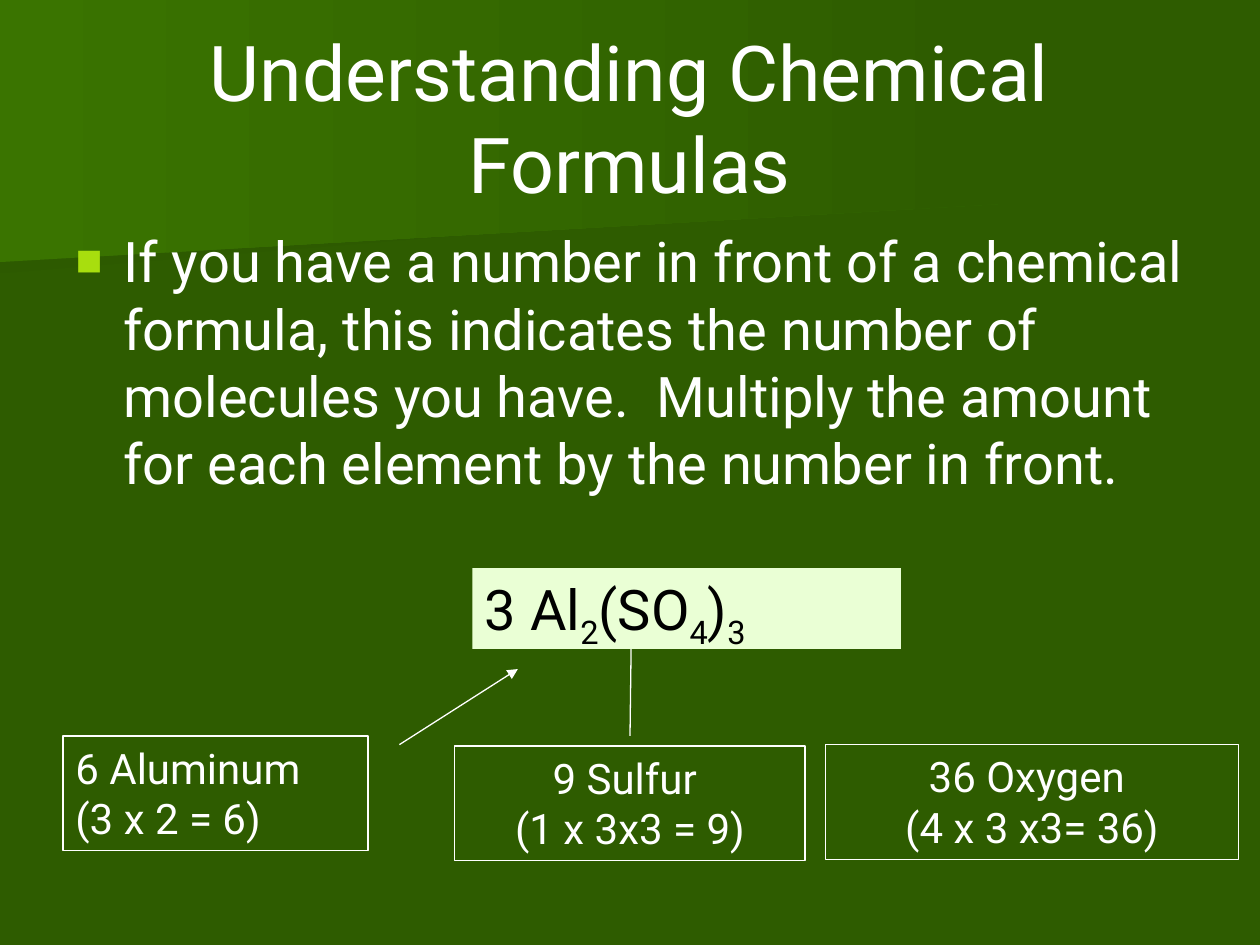
from dataclasses import dataclass

from lxml.etree import SubElement
from pptx import Presentation
from pptx.dml.color import RGBColor
from pptx.enum.shapes import MSO_CONNECTOR, MSO_SHAPE
from pptx.enum.text import MSO_ANCHOR, MSO_AUTO_SIZE, PP_ALIGN
from pptx.oxml.ns import qn
from pptx.util import Inches, Pt


@dataclass(frozen=True)
class Theme:
    font: str = "Roboto"
    title_size: int = 44
    body_size: int = 32
    label_size: int = 24
    line_width: float = 0.75
    background: RGBColor = RGBColor.from_string("2E5C00")
    shade: RGBColor = RGBColor.from_string("2D5A00")
    glow: RGBColor = RGBColor.from_string("3A7400")
    text: RGBColor = RGBColor.from_string("FFFFFF")
    formula_text: RGBColor = RGBColor.from_string("000000")
    formula_fill: RGBColor = RGBColor.from_string("EAFFD5")
    bullet: str = "A8DE0E"


theme = Theme()


def write(para, text, size, color=theme.text, align=PP_ALIGN.LEFT):
    """Add one formatted run to para and return it."""
    para.alignment = align
    span = para.add_run()
    span.text = text
    for name, value in {"name": theme.font, "size": Pt(size)}.items():
        setattr(span.font, name, value)
    span.font.color.rgb = color
    return span


def place_box(page, left, top, width, height):
    """Add a plain rectangle with top-anchored text."""
    box = page.shapes.add_shape(
        MSO_SHAPE.RECTANGLE, *map(Inches, (left, top, width, height)))
    box.shadow.inherit = False
    box.fill.background()
    box.line.fill.background()
    frame_format = {
        "word_wrap": True,
        "vertical_anchor": MSO_ANCHOR.TOP,
        "auto_size": MSO_AUTO_SIZE.SHAPE_TO_FIT_TEXT,
    }
    for name, value in frame_format.items():
        setattr(box.text_frame, name, value)
    return box


deck = Presentation()
deck.slide_width, deck.slide_height = Inches(10), Inches(7.5)
page = deck.slides.add_slide(deck.slide_layouts[1])
page.background.fill.solid()
page.background.fill.fore_color.rgb = theme.background
title, body = page.placeholders

# Background bands, fading to the right behind the text
bands = [
    (theme.shade, [(7.78, 1.53), (0, 2.17), (0, 1.01), (7.79, 1.01), (7.78, 1.28)]),
    (theme.glow, [(7.92, 1.62), (0, 2.08), (0, 0), (7.92, 0)]),
]
for start_color, corners in bands:
    points = [(Inches(x), Inches(y)) for x, y in corners]
    outline = page.shapes.build_freeform(*points[0])
    outline.add_line_segments(points[1:], close=True)
    band = outline.convert_to_shape()
    band.shadow.inherit = False
    band.line.fill.background()
    band.fill.gradient()
    band.fill.gradient_angle = 0
    for stop, color in zip(band.fill.gradient_stops, (start_color, theme.background)):
        stop.color.rgb = color
    title.element.addprevious(band.element)

# Title and explanation
for holder, top, height, anchor in (
    (title, 0.3, 1.25, MSO_ANCHOR.MIDDLE),
    (body, 1.75, 4.92, MSO_ANCHOR.TOP),
):
    holder.left, holder.top = Inches(0.5), Inches(top)
    holder.width, holder.height = Inches(9), Inches(height)
    holder.text_frame.auto_size = MSO_AUTO_SIZE.NONE
    holder.text_frame.vertical_anchor = anchor

write(title.text_frame.paragraphs[0], "Understanding Chemical Formulas",
      theme.title_size, align=PP_ALIGN.CENTER)

para = body.text_frame.paragraphs[0]
write(para, "If you have a number in front of a chemical formula, this indicates "
      "the number of molecules you have.  Multiply the amount for each element "
      "by the number in front.", theme.body_size)
para.space_before = Pt(0.2 * theme.body_size)
bullet_format = para._p.get_or_add_pPr()
bullet_format.set("marL", str(Inches(0.38)))
bullet_format.set("indent", str(Inches(-0.38)))
bullet_color = SubElement(bullet_format, qn("a:buClr"))
SubElement(bullet_color, qn("a:srgbClr"), val=theme.bullet)
SubElement(bullet_format, qn("a:buSzPct"), val="80000")
SubElement(bullet_format, qn("a:buChar"), char="■")

# Arrows from the counts to the formula
for start, end in (((3.17, 5.91), (4.11, 5.31)), ((5, 5.84), (5.01, 5.05))):
    arrow = page.shapes.add_connector(
        MSO_CONNECTOR.STRAIGHT, *map(Inches, start + end))
    arrow.line.color.rgb = theme.text
    arrow.line.width = Pt(theme.line_width)
    SubElement(arrow.line._get_or_add_ln(), qn("a:tailEnd"), type="triangle")
    SubElement(arrow.element.spPr, qn("a:effectLst"))

# Formula, covering the tip of the middle arrow
formula = place_box(page, 3.75, 4.51, 3.4, 0.64)
formula.fill.solid()
formula.fill.fore_color.rgb = theme.formula_fill
para = formula.text_frame.paragraphs[0]
for base, subscript in (("3 Al", "2"), ("(SO", "4"), (")", "3")):
    write(para, base, theme.body_size, theme.formula_text)
    span = write(para, subscript, theme.body_size, theme.formula_text)
    span.font._element.set("baseline", "-25000")

# Atom counts
counts = [
    (0.5, 5.84, 2.42, PP_ALIGN.LEFT, ("6 Aluminum", "(3 x 2 = 6)")),
    (3.61, 5.92, 2.78, PP_ALIGN.CENTER, ("9 Sulfur ", "(1 x 3x3 = 9)")),
    (6.55, 5.91, 3.28, PP_ALIGN.CENTER, ("36 Oxygen ", "(4 x 3 x3= 36)")),
]
for left, top, width, align, (element_count, working) in counts:
    box = place_box(page, left, top, width, 0.91)
    box.line.color.rgb = theme.text
    box.line.width = Pt(theme.line_width)
    frame = box.text_frame
    write(frame.paragraphs[0], element_count, theme.label_size, align=align)
    write(frame.add_paragraph(), working, theme.label_size, align=align)

deck.save("out.pptx")
